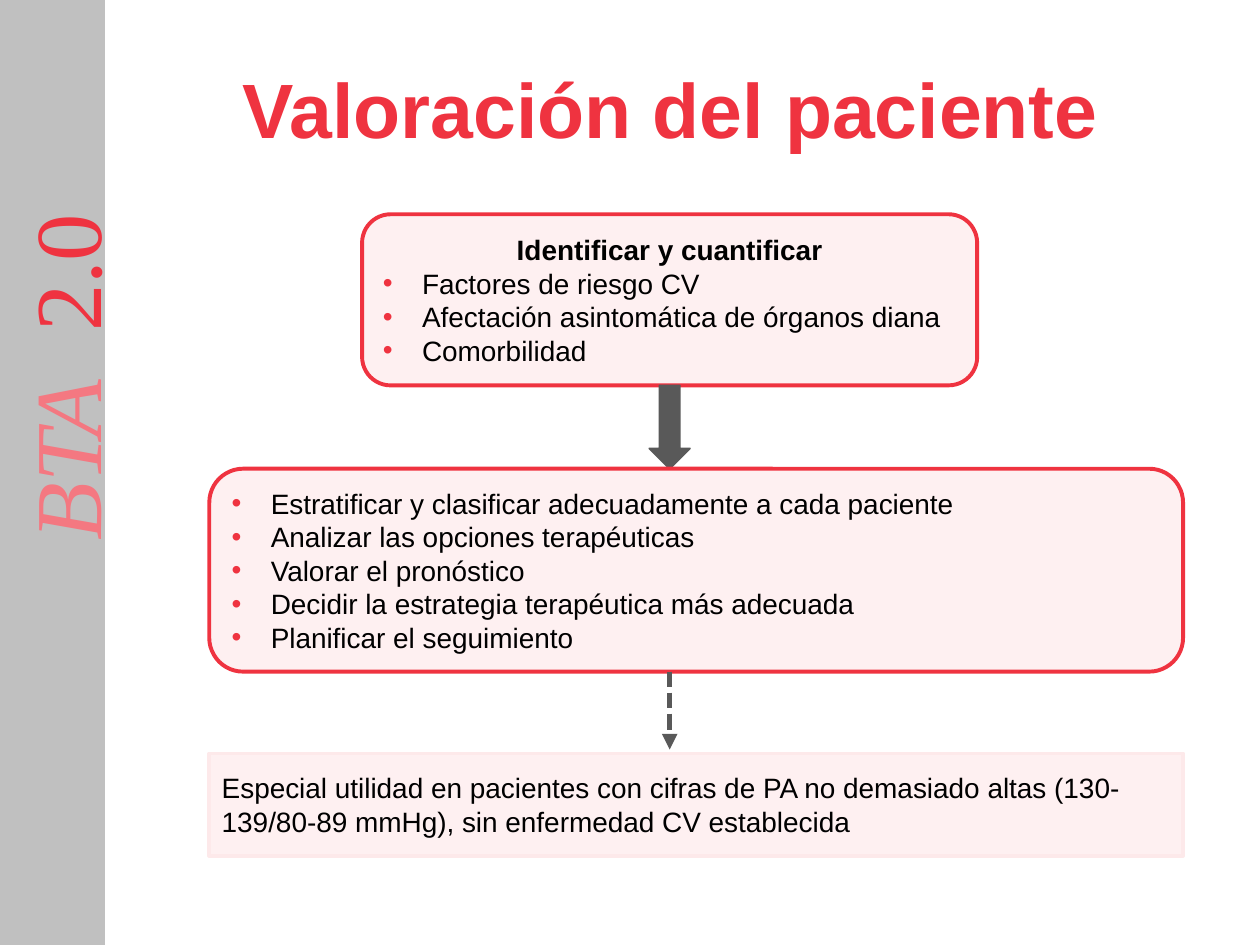
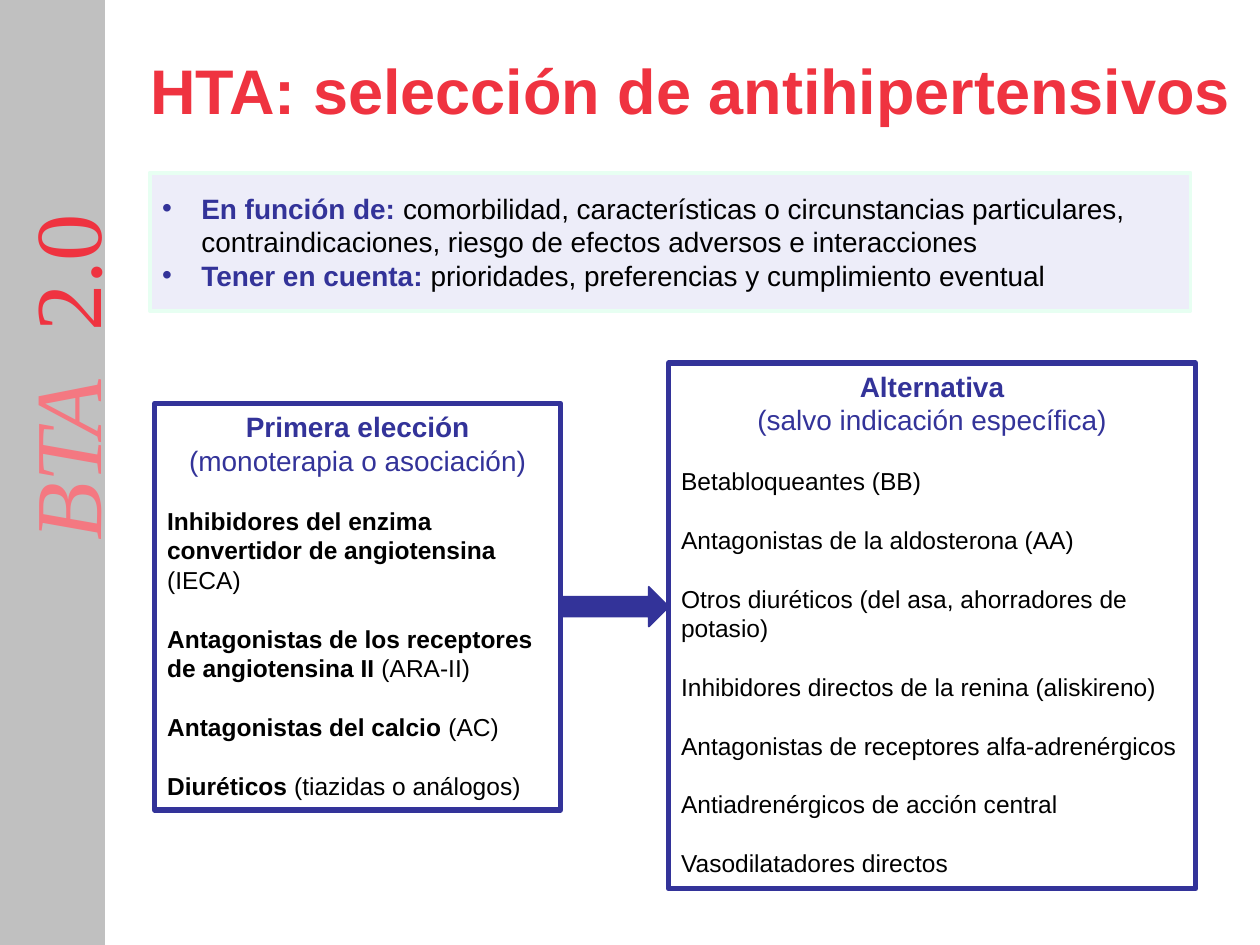
import pptx
import pptx.util
import pptx.dml.color
import pptx.enum.dml
import pptx.enum.shapes
import pptx.enum.text
import pptx.oxml
import pptx.oxml.ns
from lxml import etree

Cm, Pt = pptx.util.Cm, pptx.util.Pt
SHAPE = pptx.enum.shapes.MSO_SHAPE
ALIGN = pptx.enum.text.PP_ALIGN
ANCHOR = pptx.enum.text.MSO_ANCHOR

COLORS = {
    "red": "EF3340", "soft_red": "F47881", "pale_red": "FEF0F1", "edge_red": "FDE9EA",
    "blue": "333399", "pale_blue": "EDEDF9", "edge_mint": "E7FFF2",
    "band": "C0C0C0", "arrow": "595959", "black": "000000",
}
SLIDE_W, SLIDE_H = 25.4, 19.05
BODY_SIZE, LIST_SIZE = 16, 14
LIST_GAP = 16.8  # one empty line of list text
BULLET_INDENT = 0.79


def rgb(name):
    return pptx.dml.color.RGBColor.from_string(COLORS[name])


def add_child(parent, tag, **attributes):
    child = etree.SubElement(parent, pptx.oxml.ns.qn(tag))
    for key, value in attributes.items():
        child.set(key, str(value))
    return child


def add_panel(slide, box, kind, fill=None, line=None, width=1.0, corner=None):
    """Preset shape in box = (left, top, width, height) in cm."""
    panel = slide.shapes.add_shape(kind, *map(Cm, box))
    panel.shadow.inherit = False
    if corner is not None:
        panel.adjustments[0] = corner
    if fill:
        panel.fill.solid()
        panel.fill.fore_color.rgb = rgb(fill)
    else:
        panel.fill.background()
    panel.line.color.rgb = rgb(line or fill)
    panel.line.width = Pt(width)
    panel.text_frame.word_wrap = True
    return panel


def write(frame, paragraphs, anchor=ANCHOR.MIDDLE):
    """Fill a frame with paragraphs = [(runs, options)], runs = [(text, style)]."""
    frame.word_wrap = True
    frame.vertical_anchor = anchor
    for index, (runs, options) in enumerate(paragraphs):
        paragraph = frame.paragraphs[0] if index == 0 else frame.add_paragraph()
        paragraph.alignment = options.get("align", ALIGN.LEFT)
        if "gap" in options:
            paragraph.space_before = Pt(options["gap"])
        if "bullet" in options:
            add_bullet(paragraph, options["bullet"])
        for text, style in runs:
            run = paragraph.add_run()
            run.text = text
            run.font.name = style.get("font", "Arial")
            run.font.size = Pt(style.get("size", BODY_SIZE))
            run.font.bold = style.get("bold", False)
            run.font.italic = style.get("italic", False)
            run.font.color.rgb = rgb(style.get("color", "black"))


def add_bullet(paragraph, color):
    properties = paragraph._p.get_or_add_pPr()
    properties.set("marL", str(Cm(BULLET_INDENT)))
    properties.set("indent", str(-Cm(BULLET_INDENT)))
    add_child(add_child(properties, "a:buClr"), "a:srgbClr", val=COLORS[color])
    add_child(properties, "a:buFont", typeface="Arial")
    add_child(properties, "a:buChar", char="•")


def bullets(color, *lines):
    return [([(line, {})], {"bullet": color}) for line in lines]


def add_side_band(slide, box):
    left, top, width, height = box
    add_panel(slide, box, SHAPE.RECTANGLE, "band", width=0.75)
    # Vertical label, turned around its centre
    label_w, label_h = 8.2, 2.54
    center_x, center_y = left + 1.28, top + 7.04
    label = slide.shapes.add_textbox(Cm(center_x - label_w / 2), Cm(center_y - label_h / 2),
                                     Cm(label_w), Cm(label_h))
    label.rotation = 270
    properties = label.text_frame.paragraphs[0]._p.get_or_add_pPr()
    add_child(add_child(properties, "a:tabLst"), "a:tab", pos=Cm(4.2), algn="l")
    face = {"font": "Times New Roman", "size": 54}
    write(label.text_frame, [([("BTA\t", {**face, "color": "soft_red", "italic": True}),
                               ("2.0", {**face, "color": "red"})], {})], ANCHOR.TOP)


def add_titled_slide(deck, title, box, size):
    slide = deck.slides.add_slide(deck.slide_layouts[6])
    add_side_band(slide, (0, 0, 2.11, SLIDE_H))
    heading = slide.shapes.add_textbox(*map(Cm, box))
    write(heading.text_frame,
          [([(title, {"size": size, "bold": True, "color": "red"})], {"align": ALIGN.CENTER})],
          ANCHOR.TOP)
    return slide


def add_dashed_arrow(slide, x, top, bottom):
    arrow = slide.shapes.add_connector(pptx.enum.shapes.MSO_CONNECTOR.STRAIGHT,
                                       Cm(x), Cm(top), Cm(x), Cm(bottom))
    arrow.line.color.rgb = rgb("arrow")
    arrow.line.width = Pt(3)
    arrow.line.dash_style = pptx.enum.dml.MSO_LINE.SQUARE_DOT
    add_child(arrow.line._get_or_add_ln(), "a:tailEnd", type="triangle")
    add_child(arrow._element.spPr, "a:effectLst")


def add_assessment_flow(slide, box):
    """Identify, then stratify, then the note on where it helps most."""
    left, top, width, height = box
    axis = left + 9.28
    identify_w, identify_h = 12.4, 3.45
    stratify_top, stratify_h = top + 5.13, 4.09
    note_h = 2.06
    note_top = top + height - note_h

    identify = add_panel(slide, (axis - identify_w / 2, top, identify_w, identify_h),
                         SHAPE.ROUNDED_RECTANGLE, "pale_red", "red", 2.25)
    write(identify.text_frame, [
        ([("Identificar y cuantificar", {"bold": True})], {"align": ALIGN.CENTER}),
        *bullets("red", "Factores de riesgo CV", "Afectación asintomática de órganos diana",
                 "Comorbilidad"),
    ])

    arrow_w = 0.82
    add_panel(slide, (axis - arrow_w / 2, top + identify_h, arrow_w,
                      stratify_top - top - identify_h), SHAPE.DOWN_ARROW, "arrow")

    stratify = add_panel(slide, (left, stratify_top, width, stratify_h),
                         SHAPE.ROUNDED_RECTANGLE, "pale_red", "red", 2.25)
    write(stratify.text_frame, bullets(
        "red",
        "Estratificar y clasificar adecuadamente a cada paciente",
        "Analizar las opciones terapéuticas",
        "Valorar el pronóstico",
        "Decidir la estrategia terapéutica más adecuada",
        "Planificar el seguimiento",
    ))

    note = add_panel(slide, (left, note_top, width, note_h), SHAPE.ROUNDED_RECTANGLE,
                     "pale_red", "edge_red", 2.25, corner=0)
    write(note.text_frame, [([("Especial utilidad en pacientes con cifras de PA no demasiado altas "
                               "(130-139/80-89 mmHg), sin enfermedad CV establecida", {})], {})])
    add_dashed_arrow(slide, axis, stratify_top + stratify_h, note_top - 0.08)


def add_criteria(slide, box):
    criteria = add_panel(slide, box, SHAPE.ROUNDED_RECTANGLE, "pale_blue", "edge_mint", 2.25,
                         corner=0)
    lead = {"bold": True, "color": "blue"}
    write(criteria.text_frame, [
        ([(term, lead), (text, {})], {"bullet": "blue"}) for term, text in (
            ("En función de: ", "comorbilidad, características o circunstancias particulares, "
             "contraindicaciones, riesgo de efectos adversos e interacciones"),
            ("Tener en cuenta: ", "prioridades, preferencias y cumplimiento eventual"),
        )
    ])


def add_drug_list(slide, box, heading, remark, drugs):
    """Framed list; each drug is (bold part, plain part)."""
    frame = add_panel(slide, box, SHAPE.RECTANGLE, line="blue", width=3)
    paragraphs = [
        ([(heading, {"bold": True, "color": "blue"})], {"align": ALIGN.CENTER}),
        ([(remark, {"color": "blue"})], {"align": ALIGN.CENTER}),
    ]
    for strong, plain in drugs:
        parts = [(strong, {"size": LIST_SIZE, "bold": True}), (plain, {"size": LIST_SIZE})]
        paragraphs.append(([part for part in parts if part[0]], {"gap": LIST_GAP}))
    write(frame.text_frame, paragraphs, ANCHOR.TOP)


def add_drug_choice(slide, box):
    """First choice on the left, alternative on the right, arrow between."""
    left, top, width, height = box
    first_w, first_h, first_drop = 8.18, 8.2, 0.81
    other_w = 10.62
    other_left = left + width - other_w

    add_drug_list(slide, (left, top + first_drop, first_w, first_h),
                  "Primera elección", "(monoterapia o asociación)", [
                      ("Inhibidores del enzima convertidor de angiotensina ", "(IECA)"),
                      ("Antagonistas de los receptores de angiotensina II ", "(ARA-II)"),
                      ("Antagonistas del calcio ", "(AC)"),
                      ("Diuréticos ", "(tiazidas o análogos)"),
                  ])
    add_drug_list(slide, (other_left, top, other_w, height),
                  "Alternativa", "(salvo indicación específica)", [("", drug) for drug in (
                      "Betabloqueantes (BB)",
                      "Antagonistas de la aldosterona (AA)",
                      "Otros diuréticos (del asa, ahorradores de potasio)",
                      "Inhibidores directos de la renina (aliskireno)",
                      "Antagonistas de receptores alfa-adrenérgicos",
                      "Antiadrenérgicos de acción central",
                      "Vasodilatadores directos",
                  )])
    arrow_h = 0.8
    add_panel(slide, (left + first_w, top + first_drop + first_h / 2 - arrow_h / 2,
                      other_left - left - first_w, arrow_h), SHAPE.RIGHT_ARROW, "blue")


def main():
    deck = pptx.Presentation()
    deck.slide_width, deck.slide_height = Cm(SLIDE_W), Cm(SLIDE_H)

    assessment = add_titled_slide(deck, "Valoración del paciente", (3.5, 1.12, 20.04, 2.36), 44)
    add_assessment_flow(assessment, (4.22, 4.32, 19.63, 12.93))

    selection = add_titled_slide(deck, "HTA: selección de antihipertensivos",
                                 (2.49, 0.91, 22.86, 2.21), 36)
    add_criteria(selection, (3.02, 3.48, 20.98, 2.79))
    add_drug_choice(selection, (3.12, 7.32, 20.98, 10.6))

    deck.save("out.pptx")


if __name__ == "__main__":
    main()
